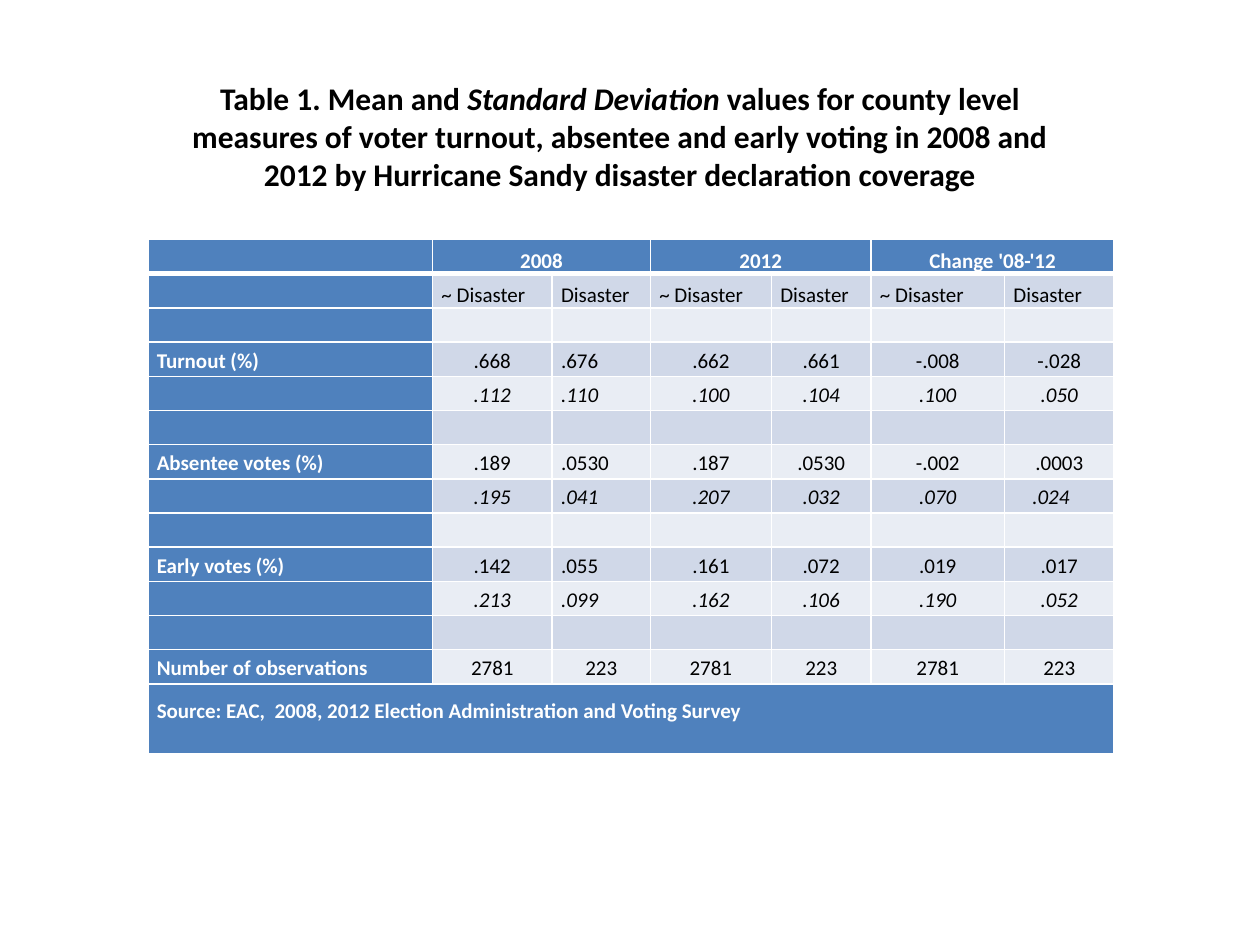
from dataclasses import dataclass

from lxml.etree import SubElement
from pptx import Presentation
from pptx.dml.color import RGBColor
from pptx.enum.text import MSO_ANCHOR, MSO_AUTO_SIZE, PP_ALIGN
from pptx.oxml.ns import qn
from pptx.util import Cm, Pt


@dataclass(frozen=True)
class Theme:
    font: str = "Calibri"
    title_size: int = 18
    table_size: int = 12
    black: str = "000000"
    white: str = "FFFFFF"
    header: str = "4F81BD"
    dark_band: str = "D0D8E8"
    light_band: str = "E9EDF4"


THEME = Theme()

TITLE_PARTS = [
    ("Table 1. Mean and ", False),
    ("Standard Deviation", True),
    (" values for county level measures of voter turnout, absentee and early "
     "voting in 2008 and 2012 by Hurricane Sandy disaster declaration coverage", False),
]

EMPTY = [""] * 7
ROWS = [
    ["", "2008", "", "2012", "", "Change '08-'12", ""],
    [""] + ["~ Disaster", "Disaster"] * 3,
    EMPTY,
    ["Turnout (%)", ".668", ".676", ".662", ".661", "-.008", "-.028"],
    ["", ".112", ".110", ".100", ".104", ".100", ".050"],
    EMPTY,
    ["Absentee votes (%)", ".189", ".0530", ".187", ".0530", "-.002", ".0003"],
    ["", ".195", ".041", ".207", ".032", ".070", ".024"],
    EMPTY,
    ["Early votes (%)", ".142", ".055", ".161", ".072", ".019", ".017"],
    ["", ".213", ".099", ".162", ".106", ".190", ".052"],
    EMPTY,
    ["Number of observations"] + ["2781", "223"] * 3,
    ["Source: EAC,  2008, 2012 Election Administration and Voting Survey"] + [""] * 6,
]
HEADER_ROW, GROUP_ROW, COUNT_ROW, SOURCE_ROW = 0, 1, 12, 13
DEVIATION_ROWS = (4, 7, 10)
INDENTED_CELL = (7, 6)
COLUMN_WIDTHS = [5.74, 2.41, 1.98, 2.44, 2.01, 2.69, 2.21]
ROW_HEIGHT, SOURCE_HEIGHT = 0.69, 1.41


def format_font(font, size, color, bold=False, italic=False):
    font.name = THEME.font
    font.size = Pt(size)
    font.bold = bold
    font.italic = italic
    font.color.rgb = RGBColor.from_string(color)


def add_title(slide):
    title = slide.shapes.title
    title.left, title.top, title.width, title.height = Cm(3.61), Cm(1.47), Cm(17.78), Cm(3.33)
    frame = title.text_frame
    frame.word_wrap = True
    frame.auto_size = MSO_AUTO_SIZE.NONE
    frame.vertical_anchor = MSO_ANCHOR.TOP
    paragraph = frame.paragraphs[0]
    paragraph.alignment = PP_ALIGN.CENTER
    for text, italic in TITLE_PARTS:
        run = paragraph.add_run()
        run.text = text
        format_font(run.font, THEME.title_size, THEME.black, True, italic)


def set_borders(cell, row):
    """White rules, with a heavier one under the header row."""
    widths = {
        "a:lnL": 1,
        "a:lnR": 1,
        "a:lnT": 3 if row == GROUP_ROW else 1,
        "a:lnB": 3 if row == HEADER_ROW else 1,
    }
    properties = cell._tc.get_or_add_tcPr()
    for tag, width in widths.items():
        line = SubElement(properties, qn(tag), w=str(Pt(width)))
        fill = SubElement(line, qn("a:solidFill"))
        SubElement(fill, qn("a:srgbClr"), val=THEME.white)


def is_heading(row, column):
    return column == 0 or row in (HEADER_ROW, SOURCE_ROW)


def cell_color(row, column):
    if is_heading(row, column):
        return THEME.header
    return THEME.dark_band if row % 2 else THEME.light_band


def cell_alignment(row, column):
    if row == HEADER_ROW or row == COUNT_ROW and column:
        return PP_ALIGN.CENTER
    if column in (0, 2) or row == GROUP_ROW or (row, column) == INDENTED_CELL:
        return PP_ALIGN.LEFT
    return PP_ALIGN.CENTER


def format_cell(cell, row, column, text):
    set_borders(cell, row)
    cell.fill.solid()
    cell.fill.fore_color.rgb = RGBColor.from_string(cell_color(row, column))
    cell.margin_left = Cm(0.56 if (row, column) == INDENTED_CELL else 0.18)
    cell.margin_right = Cm(0.18)
    cell.margin_top = 0
    cell.margin_bottom = Cm(0.6 if row == SOURCE_ROW else 0)
    at_bottom = row in (HEADER_ROW, GROUP_ROW, SOURCE_ROW)
    cell.vertical_anchor = MSO_ANCHOR.BOTTOM if at_bottom else MSO_ANCHOR.MIDDLE

    paragraph = cell.text_frame.paragraphs[0]
    paragraph.text = text
    paragraph.alignment = cell_alignment(row, column)
    paragraph.line_spacing = 1.15
    heading = is_heading(row, column)
    for run in paragraph.runs:
        format_font(run.font, THEME.table_size, THEME.white if heading else THEME.black,
                    heading, row in DEVIATION_ROWS)
    # Empty cells take the table size too, so that rows keep their height
    if not text:
        SubElement(paragraph._p, qn("a:endParaRPr"), sz=str(THEME.table_size * 100))


def add_turnout_table(slide):
    height = ROW_HEIGHT * (len(ROWS) - 1) + SOURCE_HEIGHT
    table = slide.shapes.add_table(len(ROWS), len(COLUMN_WIDTHS), Cm(2.98), Cm(4.83),
                                   Cm(sum(COLUMN_WIDTHS)), Cm(height)).table
    table.horz_banding = False
    for column, width in zip(table.columns, COLUMN_WIDTHS):
        column.width = Cm(width)
    for row in table.rows:
        row.height = Cm(ROW_HEIGHT)
    table.rows[SOURCE_ROW].height = Cm(SOURCE_HEIGHT)

    for row, texts in enumerate(ROWS):
        for column, text in enumerate(texts):
            format_cell(table.cell(row, column), row, column, text)

    # Year groups and source line
    for column in (1, 3, 5):
        table.cell(HEADER_ROW, column).merge(table.cell(HEADER_ROW, column + 1))
    table.cell(SOURCE_ROW, 0).merge(table.cell(SOURCE_ROW, len(COLUMN_WIDTHS) - 1))


def main():
    presentation = Presentation()
    presentation.slide_width, presentation.slide_height = Cm(25.4), Cm(19.05)
    slide = presentation.slides.add_slide(presentation.slide_layouts[5])
    add_turnout_table(slide)
    add_title(slide)
    presentation.save("out.pptx")


if __name__ == "__main__":
    main()
